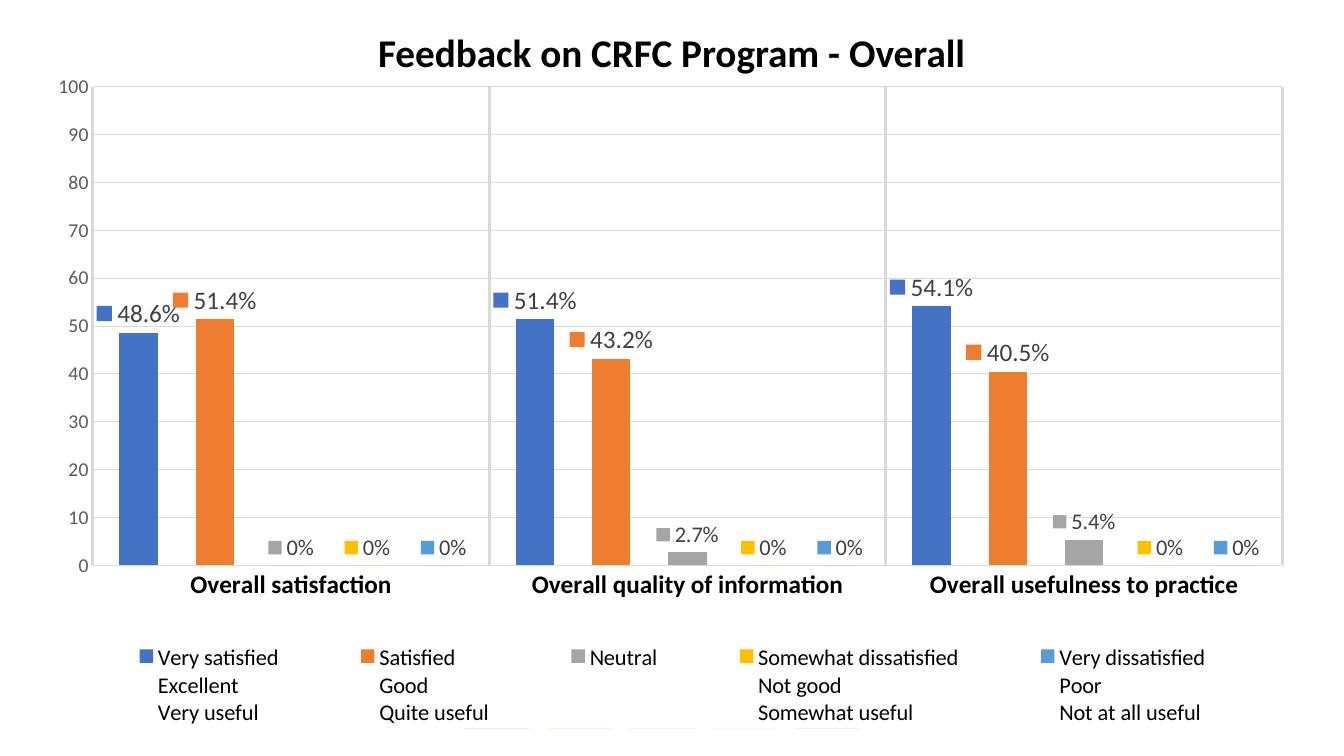
import pptx
import pptx.chart.data
import pptx.dml.color
import pptx.enum.chart
import pptx.enum.text
import pptx.oxml
import pptx.oxml.ns
import pptx.util
from pptx.util import Inches, Pt

RGBColor = pptx.dml.color.RGBColor
BLACK = RGBColor(0x00, 0x00, 0x00)
DARK_GRAY = RGBColor(0x40, 0x40, 0x40)
MID_GRAY = RGBColor(0x59, 0x59, 0x59)
GRID_GRAY = RGBColor(0xD9, 0xD9, 0xD9)
BLUE = RGBColor(0x44, 0x72, 0xC4)
ORANGE = RGBColor(0xED, 0x7D, 0x31)
GRAY = RGBColor(0xA5, 0xA5, 0xA5)
GOLD = RGBColor(0xFF, 0xC0, 0x00)
LIGHT_BLUE = RGBColor(0x5B, 0x9B, 0xD5)
SERIES_COLORS = [BLUE, ORANGE, GRAY, GOLD, LIGHT_BLUE]
FONT = "Calibri"
PERCENT = 'General"%"'

QUESTIONS = ["Overall satisfaction", "Overall quality of information",
             "Overall usefulness to practice"]
RATINGS = [
    ("Very satisfied\nExcellent\nVery useful", [48.6, 51.4, 54.1], 18),
    ("Satisfied\nGood\nQuite useful", [51.4, 43.2, 40.5], 18),
    ("Neutral", [0, 2.7, 5.4], 16),
    ("Somewhat dissatisfied\nNot good\nSomewhat useful", [0, 0, 0], 16),
    ("Very dissatisfied\nPoor\nNot at all useful", [0, 0, 0], 16),
]


def set_font(font, size, color, bold=False):
    font.name = FONT
    font.size = Pt(size)
    font.bold = bold
    font.color.rgb = color


def set_line(line, width):
    line.color.rgb = GRID_GRAY
    line.width = Pt(width)


def set_layout(parent, index, chart_box, part_box, inner=False):
    for old in parent.findall(pptx.oxml.ns.qn("c:layout")):
        parent.remove(old)
    target = '<c:layoutTarget val="inner"/>' if inner else ""
    shares = "".join(
        f'<c:{tag} val="{length / whole:.4f}"/>'
        for tag, length, whole in zip("xywh", part_box, chart_box[2:] * 2))
    parent.insert(index, pptx.oxml.parse_xml(
        f'<c:layout {pptx.oxml.ns.nsdecls("c")}><c:manualLayout>{target}'
        '<c:xMode val="edge"/><c:yMode val="edge"/>'
        f'{shares}</c:manualLayout></c:layout>'))


def add_columns(slide, box, categories, series, size, gap, overlap, plot_box):
    data = pptx.chart.data.CategoryChartData()
    data.categories = categories
    for name, values in series:
        data.add_series(name, values)
    chart = slide.shapes.add_chart(
        pptx.enum.chart.XL_CHART_TYPE.COLUMN_CLUSTERED,
        *(Inches(v) for v in box), data).chart
    set_font(chart.font, size, BLACK)
    chart.has_title = False
    chart.has_legend = False
    plot = chart.plots[0]
    plot.vary_by_categories = False
    plot.gap_width = gap
    plot.overlap = overlap
    for s, color in zip(plot.series, SERIES_COLORS):
        s.format.fill.solid()
        s.format.fill.fore_color.rgb = color
    set_layout(chart._chartSpace.chart.plotArea, 0, box, plot_box, inner=True)
    return chart


def add_feedback_chart(slide, box):
    chart = add_columns(slide, box, QUESTIONS, [r[:2] for r in RATINGS],
                        10, 140, -100, (0.46, 0.19, 11.8, 4.75))
    for s, (_, _, size) in zip(chart.plots[0].series, RATINGS):
        labels = s.data_labels
        labels.show_value = True
        labels.show_legend_key = True
        labels.number_format = PERCENT
        labels.number_format_is_linked = False
        labels.position = pptx.enum.chart.XL_LABEL_POSITION.OUTSIDE_END
        set_font(labels.font, size, DARK_GRAY)

    cat, val = chart.category_axis, chart.value_axis
    for axis, grid_width in ((cat, 2), (val, 0.75)):
        axis.major_tick_mark = pptx.enum.chart.XL_TICK_MARK.NONE
        axis.minor_tick_mark = pptx.enum.chart.XL_TICK_MARK.NONE
        axis.has_major_gridlines = True
        set_line(axis.major_gridlines.format.line, grid_width)
    set_line(cat.format.line, 0.75)
    set_font(cat.tick_labels.font, 18, BLACK, bold=True)
    val.format.line.fill.background()
    val.minimum_scale, val.maximum_scale, val.major_unit = 0, 100, 10
    set_font(val.tick_labels.font, 14, MID_GRAY)

    chart.has_legend = True
    legend = chart.legend
    legend.position = pptx.enum.chart.XL_LEGEND_POSITION.BOTTOM
    legend.include_in_layout = False
    set_font(legend.font, 16, BLACK)
    set_layout(legend._element, 1, box, (0.18, 5.69, 12.06, 0.89))


def add_baseline_chart(slide, box):
    series = [(f"Series {n}", [0]) for n in range(1, 6)]
    chart = add_columns(slide, box, ["1"], series, 14, 219, -27,
                        (3.44, 0.1, 5.34, 0.22))
    chart.value_axis.has_major_gridlines = False
    chart.category_axis.visible = False
    chart.value_axis.visible = False


def add_title(slide, box):
    tf = slide.shapes.add_textbox(*(Inches(v) for v in box)).text_frame
    tf.word_wrap = True
    tf.auto_size = pptx.enum.text.MSO_AUTO_SIZE.SHAPE_TO_FIT_TEXT
    p = tf.paragraphs[0]
    p.text = "Feedback on CRFC Program - Overall"
    p.alignment = pptx.enum.text.PP_ALIGN.CENTER
    set_font(p.font, 28, BLACK, bold=True)


def main():
    prs = pptx.Presentation()
    prs.slide_width = Inches(13.33)
    prs.slide_height = Inches(7.5)
    slide = prs.slides.add_slide(prs.slide_layouts[6])
    add_feedback_chart(slide, (0.46, 0.67, 12.42, 6.6))
    add_baseline_chart(slide, (0.46, 6.91, 11.5, 0.42))
    add_title(slide, (2.6, 0.23, 8.12, 0.57))
    prs.save("out.pptx")


if __name__ == "__main__":
    main()
